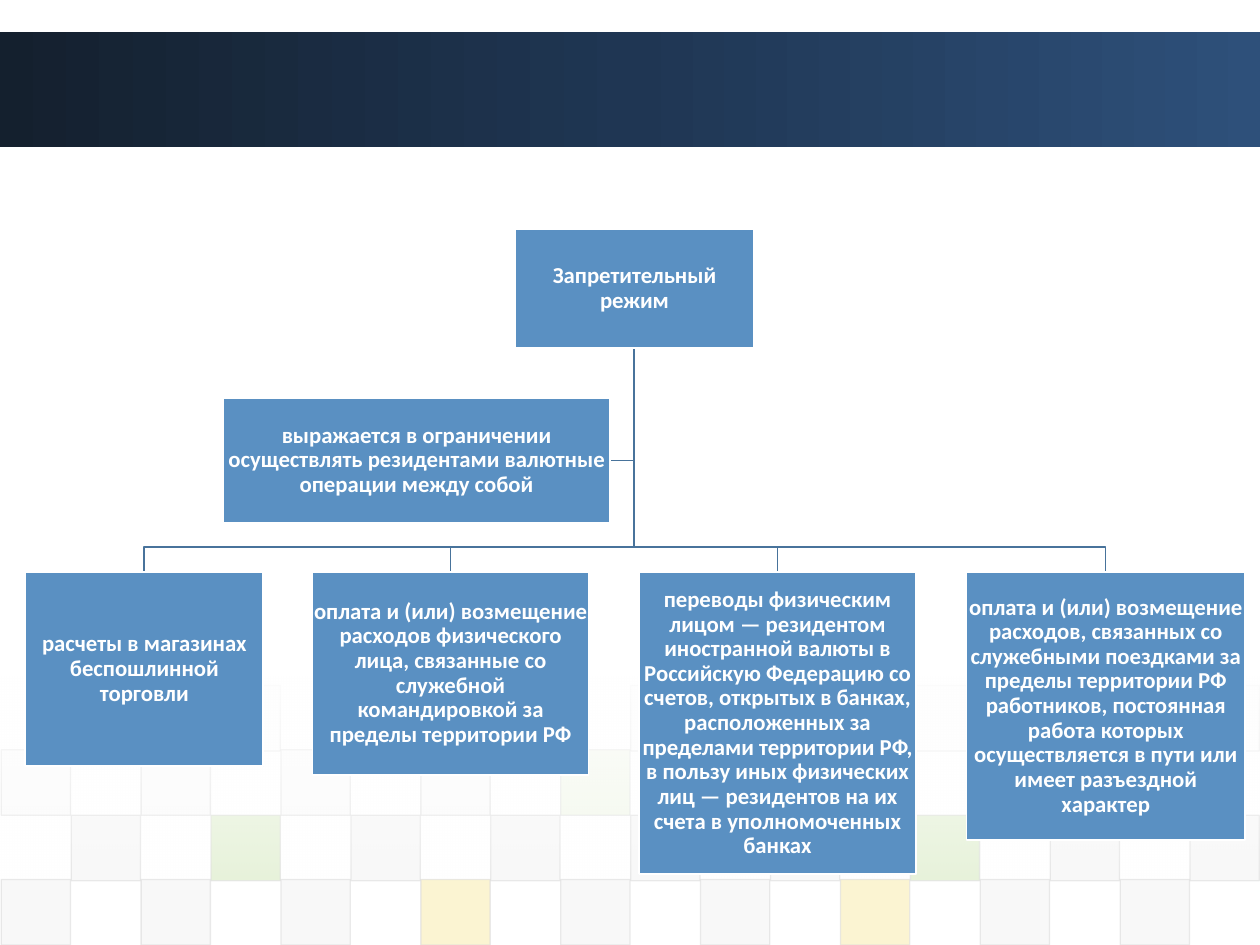
import pptx
import pptx.dml.color
import pptx.enum.shapes
import pptx.enum.text
import pptx.oxml.ns
import pptx.util
from lxml import etree

Inches = pptx.util.Inches
qn = pptx.oxml.ns.qn

GREY, PALE, GREEN, YELLOW = "DDDDDD", "EAEAEA", "8AC246", "EFC821"
TILE_PITCH = 0.555
TILE_ROWS = [
    (5.44, 5, {3: PALE, 9: GREY, 13: PALE, 17: PALE}),
    (5.95, 10, {0: GREY, 2: GREY, 4: GREY, 6: GREY, 8: GREEN}),
    (6.47, 20, {1: GREY, 3: GREEN, 5: GREY, 7: GREY, 9: GREY,
                11: GREY, 13: GREEN, 15: GREY, 17: GREY}),
    (6.98, 20, {0: GREY, 2: GREY, 4: GREY, 6: YELLOW, 8: GREY,
                10: GREY, 12: YELLOW, 14: GREY, 16: GREY}),
]
ROOT = (4.09, 1.82, 1.89, 0.94, "Запретительный режим")
ASSISTANT = (1.77, 3.16, 3.07, 0.99,
             "выражается в ограничении осуществлять резидентами "
             "валютные операции между собой")
CASES_TOP = 4.54
BUS_Y = 4.34
CASES = [
    (0.2, 1.89, 1.54, "расчеты в магазинах беспошлинной торговли"),
    (2.48, 2.19, 1.61,
     "оплата и (или) возмещение расходов физического лица, связанные со "
     "служебной командировкой за пределы территории РФ"),
    (5.07, 2.2, 2.4,
     "переводы физическим лицом — резидентом иностранной валюты в Российскую "
     "Федерацию со счетов, открытых в банках, расположенных за пределами "
     "территории РФ, в пользу иных физических лиц — резидентов на их счета "
     "в уполномоченных банках"),
    (7.67, 2.21, 2.13,
     "оплата и (или) возмещение расходов, связанных со служебными поездками "
     "за пределы территории РФ работников, постоянная работа которых "
     "осуществляется в пути или имеет разъездной характер"),
]


def rgb(value):
    """Turn a hex string into a colour."""
    return pptx.dml.color.RGBColor.from_string(value)


def set_alpha(parent, percent):
    """Make the colour inside an element partly transparent."""
    for color in parent.iter(qn("a:srgbClr")):
        etree.SubElement(color, qn("a:alpha"), val=str(percent * 1000))


class OrgSlide:
    """Hold the style and the slide, and draw each kind of element."""

    font = "Calibri"
    size = 13
    box_fill = "5A90C2"
    branch_color = "48739B"

    def __init__(self, slide):
        """Keep the slide to draw on."""
        self.slide = slide

    def rect(self, left, top, width, height):
        """Add a rectangle without shadow or outline."""
        shape = self.slide.shapes.add_shape(
            pptx.enum.shapes.MSO_SHAPE.RECTANGLE,
            Inches(left), Inches(top), Inches(width), Inches(height))
        shape.shadow.inherit = False
        shape.line.fill.background()
        return shape

    def outline(self, shape, color, points):
        """Give a shape a solid outline."""
        shape.line.color.rgb = rgb(color)
        shape.line.width = pptx.util.Pt(points)

    def gradient(self, left, top, width, height, stops, angle):
        """Add a rectangle with a gradient of (position, colour, alpha) stops."""
        shape = self.rect(left, top, width, height)
        shape.fill.gradient()
        grad = shape._element.spPr.find(qn("a:gradFill"))
        for child in list(grad):
            grad.remove(child)
        stop_list = etree.SubElement(grad, qn("a:gsLst"))
        for position, color, alpha in stops:
            stop = etree.SubElement(stop_list, qn("a:gs"), pos=str(position * 1000))
            etree.SubElement(stop, qn("a:srgbClr"), val=color)
            set_alpha(stop, alpha)
        etree.SubElement(grad, qn("a:lin"), ang=str(angle * 60000), scaled="0")

    def tile(self, column, top, color, alpha):
        """Add one transparent tile of the background mosaic."""
        shape = self.rect(0.01 + column * TILE_PITCH, top, 0.55, 0.52)
        shape.fill.solid()
        shape.fill.fore_color.rgb = rgb(color)
        self.outline(shape, GREY, 0.75)
        properties = shape._element.spPr
        set_alpha(properties.find(qn("a:solidFill")), alpha)
        set_alpha(properties.find(qn("a:ln")), 60)

    def branch(self, points):
        """Add an open bent line through the points."""
        start, *rest = [(Inches(x), Inches(y)) for x, y in points]
        builder = self.slide.shapes.build_freeform(*start)
        builder.add_line_segments(rest, close=False)
        shape = builder.convert_to_shape()
        shape.shadow.inherit = False
        shape.fill.background()
        self.outline(shape, self.branch_color, 1)

    def box(self, left, top, width, height, text):
        """Add a chart box with centred bold text."""
        shape = self.rect(left, top, width, height)
        shape.fill.solid()
        shape.fill.fore_color.rgb = rgb(self.box_fill)
        self.outline(shape, "FFFFFF", 1)
        frame = shape.text_frame
        frame.word_wrap = True
        frame.vertical_anchor = pptx.enum.text.MSO_ANCHOR.MIDDLE
        frame.margin_left = frame.margin_right = Inches(0.01)
        frame.margin_top = frame.margin_bottom = Inches(0.01)
        frame.text = text
        paragraph = frame.paragraphs[0]
        paragraph.alignment = pptx.enum.text.PP_ALIGN.CENTER
        paragraph.line_spacing = 0.9
        font = paragraph.runs[0].font
        font.name = self.font
        font.size = pptx.util.Pt(self.size)
        font.bold = True
        font.color.rgb = rgb("FFFFFF")


def main():
    """Build the slide and save it."""
    deck = pptx.Presentation()
    deck.slide_width, deck.slide_height = Inches(10), Inches(7.5)
    org = OrgSlide(deck.slides.add_slide(deck.slide_layouts[6]))

    org.gradient(0, 0.25, 10, 0.92,
                 [(0, "14202E", 100), (50, "1F3653", 100), (100, "2E507A", 100)], 0)
    for top, alpha, tiles in TILE_ROWS:
        for column, color in tiles.items():
            org.tile(column, top, color, alpha)
    org.gradient(0, 5.37, 10, 1.62, [(0, "FFFFFF", 90), (100, "FFFFFF", 0)], 90)

    root_left, root_top, root_width, root_height, _ = ROOT
    trunk_x, trunk_y = root_left + root_width / 2, root_top + root_height
    left, top, width, height, _ = ASSISTANT
    middle = top + height / 2
    org.branch([(trunk_x, trunk_y), (trunk_x, middle), (left + width, middle)])
    for left, width, _, _ in CASES:
        center = left + width / 2
        org.branch([(trunk_x, trunk_y), (trunk_x, BUS_Y),
                    (center, BUS_Y), (center, CASES_TOP)])

    org.box(*ROOT)
    for left, width, height, text in CASES:
        org.box(left, CASES_TOP, width, height, text)
    org.box(*ASSISTANT)
    deck.save("out.pptx")


if __name__ == "__main__":
    main()
